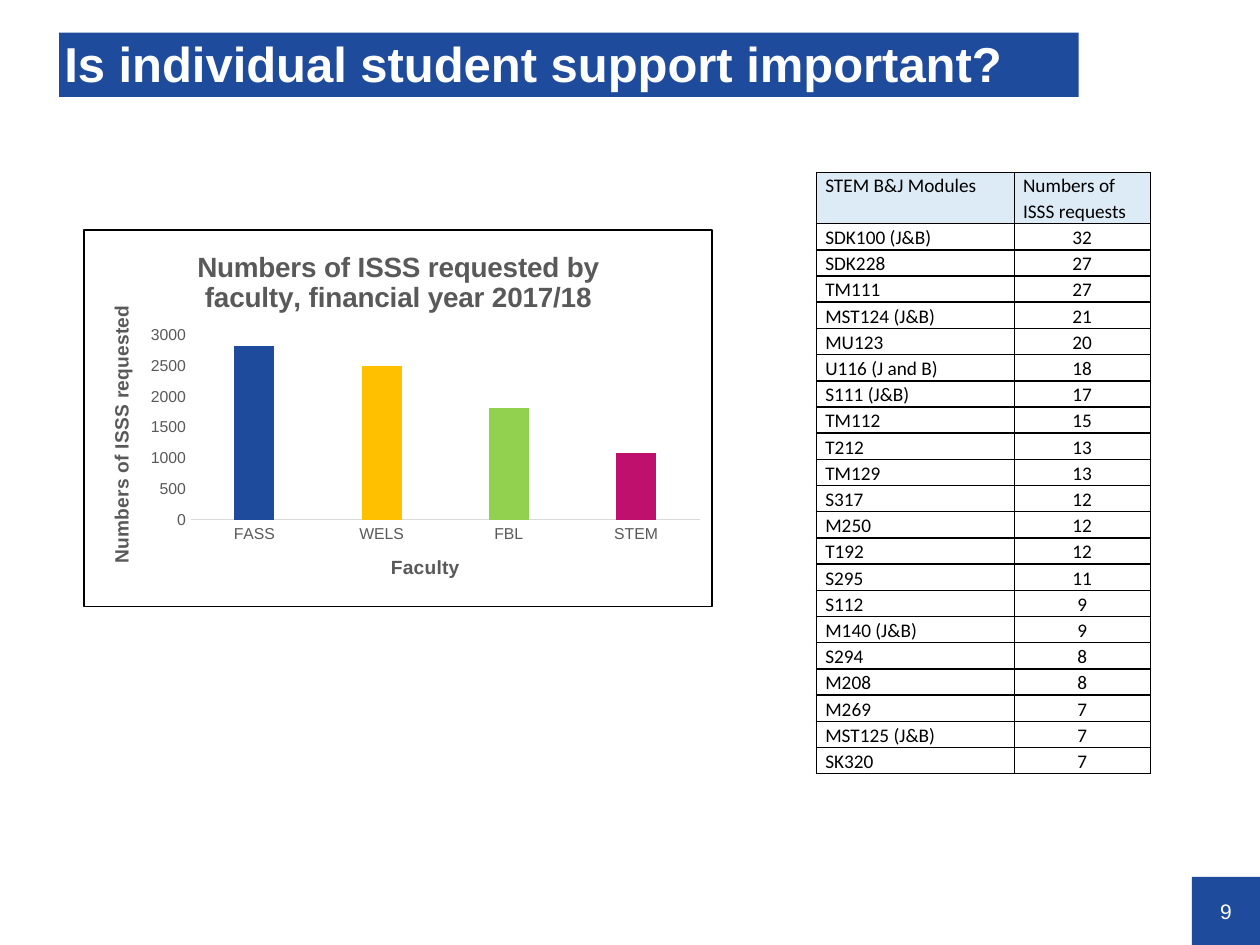
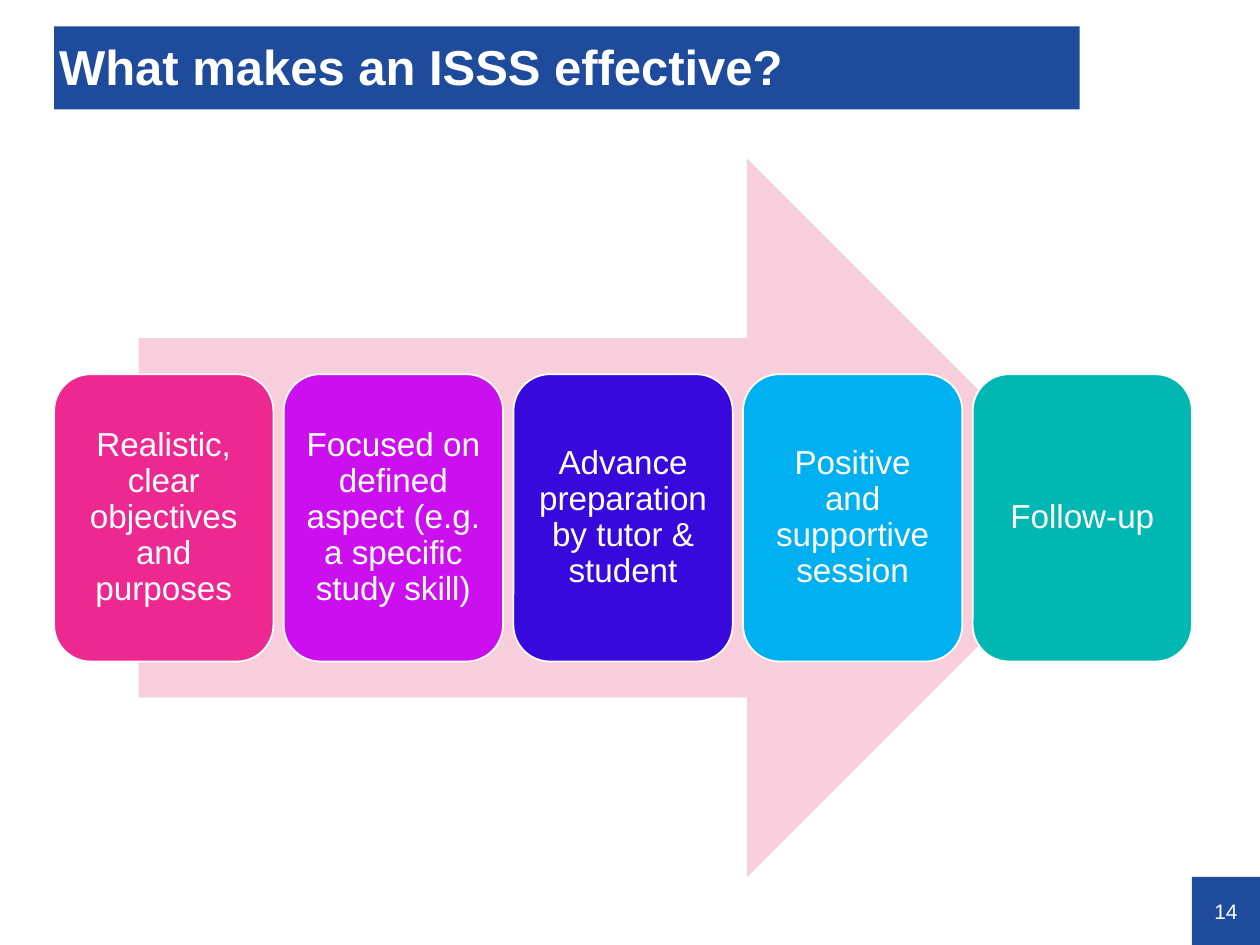
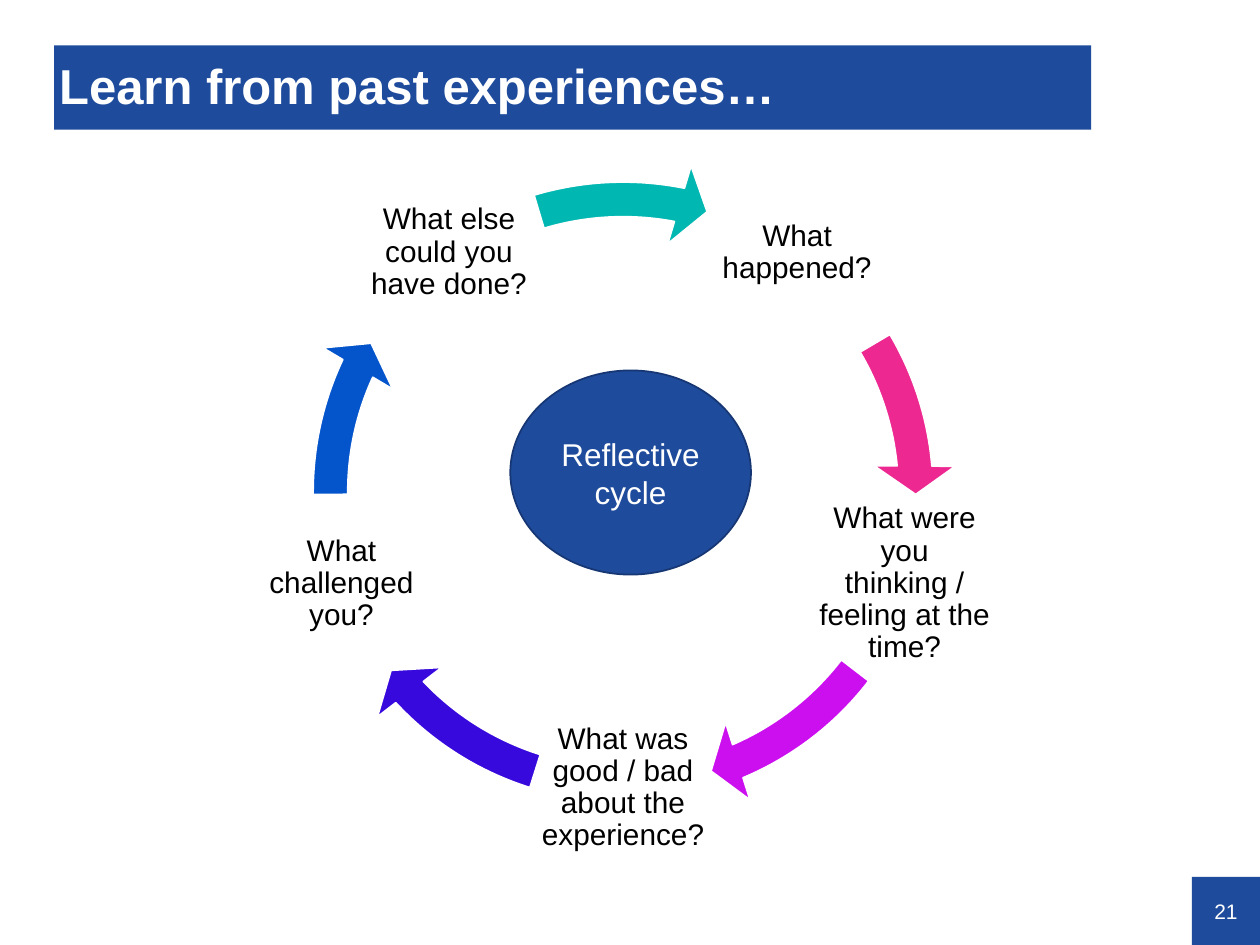
import math

import pptx
import pptx.chart.data
import pptx.dml.color
import pptx.enum.chart
import pptx.enum.shapes
import pptx.enum.text
import pptx.oxml
import pptx.oxml.ns
import pptx.util

SHAPE = pptx.enum.shapes.MSO_SHAPE
ALIGN = pptx.enum.text.PP_ALIGN
ANCHOR = pptx.enum.text.MSO_ANCHOR
Pt = pptx.util.Pt

# The grid: 100 columns by 75 rows of square cells
COLS, ROWS = 100, 75
CELL = pptx.util.Inches(0.1)

BLUE, NAVY, TEAL = "1E4B9B", "163773", "00B7B2"
PINK, PURPLE, VIOLET = "ED2891", "CC0FEF", "3809DD"
WHITE, BLACK, GREY = "FFFFFF", "000000", "595959"


def grid(*cells):
    return [pptx.util.Emu(round(c * CELL)) for c in cells]


def color(hex_code):
    return pptx.dml.color.RGBColor.from_string(hex_code)


def xml(source):
    """Build an element whose a: and c: prefixes are declared on its root."""
    head, tail = source.split(">", 1)
    end = "/" if head.endswith("/") else ""
    return pptx.oxml.parse_xml(
        f"{head.rstrip('/')} {pptx.oxml.ns.nsdecls('a', 'c')}{end}>{tail}")


def line_fill(hex_code):
    return f'<a:solidFill><a:srgbClr val="{hex_code}"/></a:solidFill>'


class Deck:
    """Holds the style, the presentation and the current slide."""

    font = "Arial"

    def __init__(self):
        self.prs = pptx.Presentation()
        self.prs.slide_width, self.prs.slide_height = grid(COLS, ROWS)
        self.s = None

    def style(self, font, size, hex_code, bold=False, name=None):
        font.name = name or self.font
        font.size = Pt(size)
        font.bold = bold
        font.color.rgb = color(hex_code)

    def slide(self, title, number, band):
        self.s = self.prs.slides.add_slide(self.prs.slide_layouts[6])
        # Page number square in the bottom right corner
        sp = self.shape(SHAPE.RECTANGLE, (COLS - 5.4, ROWS - 5.4, 5.4, 5.4), BLUE)
        self.text(sp.text_frame, str(number), 12, WHITE)
        # Title band
        sp = self.shape(SHAPE.RECTANGLE, band, BLUE)
        self.text(sp.text_frame, title, 28, WHITE, bold=True, align=ALIGN.LEFT,
                  spacing=0.9, insets=(0.4, 0.2, 0, 0))

    def shape(self, kind, at, fill, line=None, adjust=()):
        sp = self.s.shapes.add_shape(kind, *grid(*at))
        sp.shadow.inherit = False
        sp.fill.solid()
        sp.fill.fore_color.rgb = color(fill)
        if line:
            sp.line.color.rgb = color(line)
            sp.line.width = Pt(1)
        else:
            sp.line.fill.background()
        for i, value in enumerate(adjust):
            sp.adjustments[i] = value
        return sp

    def text(self, tf, words, size, hex_code, bold=False, align=ALIGN.CENTER,
             spacing=1.0, insets=(0, 0, 0, 0)):
        tf.word_wrap = True
        tf.vertical_anchor = ANCHOR.MIDDLE
        (tf.margin_left, tf.margin_top,
         tf.margin_right, tf.margin_bottom) = grid(*insets)
        self.paragraph(tf, words, size, hex_code, align, spacing, bold)

    def paragraph(self, tf, words, size, hex_code, align, spacing,
                  bold=False, name=None):
        p = tf.paragraphs[0]
        p.alignment = align
        p.line_spacing = spacing
        r = p.add_run()
        r.text = words
        self.style(r.font, size, hex_code, bold, name)

    def label(self, words, at, size):
        tb = self.s.shapes.add_textbox(*grid(*at))
        self.text(tb.text_frame, words, size, BLACK, spacing=0.9,
                  insets=(0.2,) * 4)

    def table(self, header, rows, left, top, widths, head_height, row_height):
        height = head_height + row_height * len(rows)
        frame = self.s.shapes.add_table(
            len(rows) + 1, len(widths), *grid(left, top, sum(widths), height))
        tbl = frame.table
        tbl.first_row = tbl.horz_banding = False
        for col, width in zip(tbl.columns, grid(*widths)):
            col.width = width
        for i, values in enumerate([header, *rows]):
            tbl.rows[i].height = grid(row_height if i else head_height)[0]
            for j, value in enumerate(values):
                self.cell(tbl.cell(i, j), str(value), is_head=i == 0,
                          align=ALIGN.CENTER if i and j else ALIGN.LEFT)

    def cell(self, cell, words, is_head, align):
        (cell.margin_left, cell.margin_top,
         cell.margin_right, cell.margin_bottom) = grid(0.7, 0, 0.7, 0)
        cell.vertical_anchor = ANCHOR.TOP if is_head else ANCHOR.BOTTOM
        self.paragraph(cell.text_frame, words, 11, BLACK, align, 1.07,
                       name="Calibri")
        tc_pr = cell._tc.get_or_add_tcPr()
        for side in "LRTB":
            tc_pr.append(xml(f'<a:ln{side} w="12700">{line_fill(BLACK)}</a:ln{side}>'))
        if is_head:
            cell.fill.solid()
            cell.fill.fore_color.rgb = color("DDEBF7")
        else:
            cell.fill.background()

    def chart_title(self, owner, words, size, tf_owner):
        owner.has_title = True
        p = tf_owner(owner).text_frame.paragraphs[0]
        r = p.add_run()
        r.text = words
        self.style(r.font, size, GREY, bold=True)

    def column_chart(self, title, x_title, y_title, values, colors, at, plot):
        data = pptx.chart.data.CategoryChartData()
        data.categories = list(values)
        data.add_series("Series 1", list(values.values()))
        chart = self.s.shapes.add_chart(
            pptx.enum.chart.XL_CHART_TYPE.COLUMN_CLUSTERED, *grid(*at), data).chart
        self.style(chart.font, 10, BLACK)
        chart.has_legend = False
        self.chart_title(chart, title, 16, lambda c: c.chart_title)
        # Bars
        bars = chart.plots[0]
        bars.gap_width, bars.overlap, bars.vary_by_categories = 219, -27, False
        for i, hex_code in enumerate(colors):
            fill = bars.series[0].points[i].format.fill
            fill.solid()
            fill.fore_color.rgb = color(hex_code)
        # Axes
        for axis, words in ((chart.category_axis, x_title),
                            (chart.value_axis, y_title)):
            self.chart_title(axis, words, 11, lambda a: a.axis_title)
            axis.has_major_gridlines = False
            axis.major_tick_mark = pptx.enum.chart.XL_TICK_MARK.NONE
            self.style(axis.tick_labels.font, 9, GREY)
        chart.category_axis.format.line.color.rgb = color("D9D9D9")
        chart.category_axis.format.line.width = Pt(0.75)
        axis = chart.value_axis
        axis.format.line.fill.background()
        axis.minimum_scale, axis.maximum_scale, axis.major_unit = 0, 3000, 500
        # Place of the plot, as shares of the chart
        qn = pptx.oxml.ns.qn
        area = chart._chartSpace.find(".//" + qn("c:plotArea"))
        for old in area.findall(qn("c:layout")):
            area.remove(old)
        places = "".join(f'<c:{k} val="{v}"/>' for k, v in zip("xywh", plot))
        area.insert(0, xml(
            '<c:layout><c:manualLayout><c:layoutTarget val="inner"/>'
            '<c:xMode val="edge"/><c:yMode val="edge"/>'
            f'{places}</c:manualLayout></c:layout>'))
        # Chart background and border
        chart._chartSpace.find(qn("c:txPr")).addprevious(xml(
            f'<c:spPr>{line_fill(WHITE)}'
            f'<a:ln w="12700">{line_fill(BLACK)}</a:ln></c:spPr>'))


def support_slide(deck):
    deck.slide("Is individual student support important?", 9, (4.7, 2.6, 80.9, 5.1))
    deck.column_chart(
        "Numbers of ISSS requested by faculty, financial year 2017/18",
        "Faculty", "Numbers of ISSS requested",
        {"FASS": 2820, "WELS": 2500, "FBL": 1820, "STEM": 1080},
        (BLUE, "FFC000", "92D050", "C0106E"),
        at=(6.6, 18.2, 50, 30), plot=(0.17, 0.28, 0.81, 0.49))
    requests = [
        ("SDK100 (J&B)", 32), ("SDK228", 27), ("TM111", 27), ("MST124 (J&B)", 21),
        ("MU123", 20), ("U116 (J and B)", 18), ("S111 (J&B)", 17), ("TM112", 15),
        ("T212", 13), ("TM129", 13), ("S317", 12), ("M250", 12), ("T192", 12),
        ("S295", 11), ("S112", 9), ("M140 (J&B)", 9), ("S294", 8), ("M208", 8),
        ("M269", 7), ("MST125 (J&B)", 7), ("SK320", 7),
    ]
    deck.table(("STEM B&J Modules", "Numbers of ISSS requests"), requests,
               left=64.8, top=13.7, widths=(15.7, 10.8),
               head_height=4.05, row_height=2.08)


def effective_slide(deck):
    deck.slide("What makes an ISSS effective?", 14, (4.3, 2.1, 81.4, 6.6))
    deck.shape(SHAPE.RIGHT_ARROW, (11, 12.6, 76.8, 57), "F8CDDC")
    steps = [
        ("Realistic, clear objectives and purposes", PINK),
        ("Focused on defined aspect (e.g. a specific study skill)", PURPLE),
        ("Advance preparation by tutor & student", VIOLET),
        ("Positive and supportive session", "00B0F0"),
        ("Follow-up", TEAL),
    ]
    left, right, width = 4.3, 94.6, 17.4
    pitch = (right - left - width) / (len(steps) - 1)
    for i, (words, fill) in enumerate(steps):
        sp = deck.shape(SHAPE.ROUNDED_RECTANGLE,
                        (left + i * pitch, 29.7, width, 22.8), fill, WHITE)
        deck.text(sp.text_frame, words, 19, WHITE, spacing=0.9, insets=(0.8,) * 4)


def cycle_slide(deck):
    deck.slide("Learn from past experiences…", 21, (4.3, 3.6, 82.3, 6.7))
    # Each question with the colour, start and end angle of the arrow after it
    stages = [
        ("What happened?", PINK, 329.44, 354.89),
        ("What were you thinking / feeling at the time?", PURPLE, 37.56, 66.91),
        ("What was good / bad about the experience?", VIOLET, 107.49, 136.85),
        ("What challenged you?", "0454CB", 179.51, 204.97),
        ("What else could you have done?", TEAL, 253.31, 281.1),
    ]
    cx, cy, radius, side, ring = 49.45, 39.05, 23.5, 14.1, 52.9
    turn = 360 / len(stages)
    for i, (words, fill, start, end) in enumerate(stages):
        angle = math.radians(i * turn - 54)
        deck.label(words, (cx + radius * math.cos(angle) - side / 2,
                           cy + radius * math.sin(angle) - side / 2, side, side), 17)
        # One degree is 0.6 in adjustment units
        deck.shape(SHAPE.CIRCULAR_ARROW, (cx - ring / 2, cy - ring / 2, ring, ring),
                   fill, WHITE,
                   adjust=(0.052, 3.359, end * 0.6, start * 0.6, 0.061))
    sp = deck.shape(SHAPE.FLOWCHART_CONNECTOR, (40.5, 29.4, 19.1, 16.2), BLUE, NAVY)
    deck.text(sp.text_frame, "Reflective cycle", 18, WHITE, insets=(1, 0.5, 1, 0.5))


def main():
    deck = Deck()
    support_slide(deck)
    effective_slide(deck)
    cycle_slide(deck)
    deck.prs.save("out.pptx")


if __name__ == "__main__":
    main()
